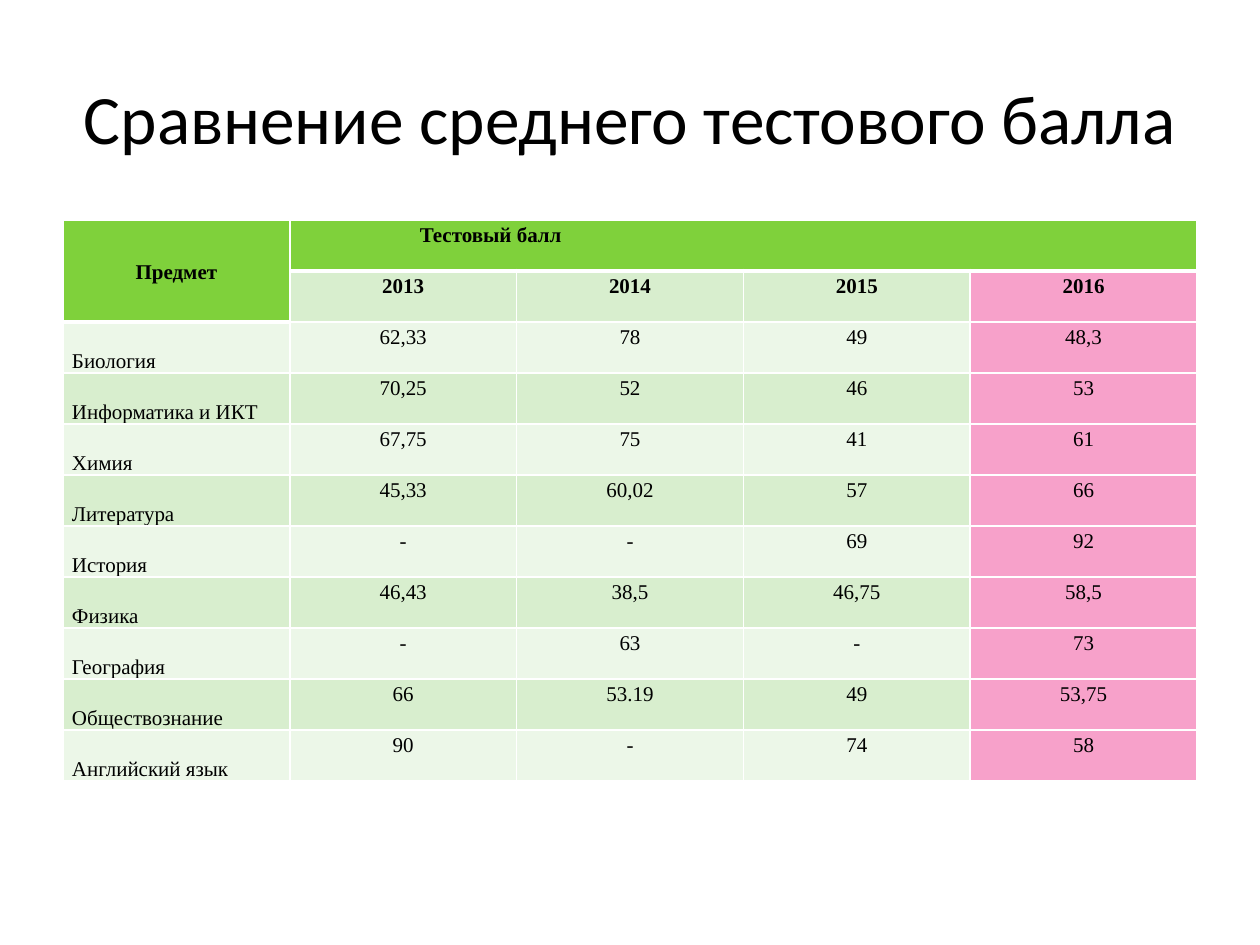
from dataclasses import dataclass

from lxml.etree import SubElement
from pptx import Presentation
from pptx.dml.color import RGBColor
from pptx.enum.text import MSO_ANCHOR, PP_ALIGN
from pptx.oxml import parse_xml
from pptx.oxml.ns import nsdecls, qn
from pptx.util import Inches, Pt

PX_PER_INCH = 126


@dataclass(frozen=True)
class Theme:
    text: str = "000000"
    header: str = "7FD13B"
    band_dark: str = "D8EECE"
    band_light: str = "ECF7E8"
    latest: str = "F7A1CA"
    border: str = "FFFFFF"
    title_font: str = "Calibri"
    table_font: str = "Times New Roman"
    title_size: float = 39.6
    table_size: float = 12
    thin: int = 1
    thick: int = 3


THEME = Theme()

YEARS = ["2013", "2014", "2015", "2016"]
SCORES = [
    ["Биология", "62,33", "78", "49", "48,3"],
    ["Информатика и ИКТ", "70,25", "52", "46", "53"],
    ["Химия", "67,75", "75", "41", "61"],
    ["Литература", "45,33", "60,02", "57", "66"],
    ["История", "-", "-", "69", "92"],
    ["Физика", "46,43", "38,5", "46,75", "58,5"],
    ["География", "-", "63", "-", "73"],
    ["Обществознание", "66", "53.19", "49", "53,75"],
    ["Английский язык", "90", "-", "74", "58"],
]


def px(n):
    return Inches(n / PX_PER_INCH)


def format_text(p, font, size, align, bold=False):
    p.alignment = align
    for r in p.runs:
        r.font.name = font
        r.font.size = Pt(size)
        r.font.bold = bold
        r.font.color.rgb = RGBColor.from_string(THEME.text)


def add_title(s, text, x, y, w, h):
    tf = s.shapes.add_textbox(px(x), px(y), px(w), px(h)).text_frame
    tf.word_wrap = True
    tf.vertical_anchor = MSO_ANCHOR.MIDDLE
    tf.text = text
    format_text(tf.paragraphs[0], THEME.title_font, THEME.title_size, PP_ALIGN.CENTER)


def set_borders(cell, top, bottom):
    """Draw all four edges; top and bottom are widths in points."""
    tcPr = cell._tc.get_or_add_tcPr()
    edges = {"lnL": THEME.thin, "lnR": THEME.thin, "lnT": top, "lnB": bottom}
    for i, (tag, width) in enumerate(edges.items()):
        ln = parse_xml(f'<a:{tag} {nsdecls("a")} w="{Pt(width)}"/>')
        fill = SubElement(ln, qn("a:solidFill"))
        SubElement(fill, qn("a:srgbClr"), val=THEME.border)
        tcPr.insert(i, ln)


def cell_fill(row, col, last_col):
    if row == 0 or (row == 1 and col == 0):
        return THEME.header
    if col == last_col:
        return THEME.latest
    return THEME.band_dark if row % 2 else THEME.band_light


def format_cell(cell, row, col, last_col):
    header_rows = 2 if col == 0 else 1
    is_subject = col == 0 and row >= header_rows
    cell.margin_left = cell.margin_right = px(9)
    cell.margin_top = cell.margin_bottom = 0
    if col == 0:
        cell.vertical_anchor = MSO_ANCHOR.BOTTOM if is_subject else MSO_ANCHOR.MIDDLE
    cell.fill.solid()
    cell.fill.fore_color.rgb = RGBColor.from_string(cell_fill(row, col, last_col))
    set_borders(cell,
                THEME.thick if row == header_rows else THEME.thin,
                THEME.thick if row == header_rows - 1 else THEME.thin)
    p = cell.text_frame.paragraphs[0]
    p.line_spacing = 1.15
    left = is_subject or (row == 0 and col > 0)
    format_text(p, THEME.table_font, THEME.table_size,
                PP_ALIGN.LEFT if left else PP_ALIGN.CENTER, bold=row < 2)


def add_score_table(s, x, y, w, row_h):
    rows = [["Предмет", "Тестовый балл", "", "", ""], ["", *YEARS], *SCORES]
    last_col = len(YEARS)
    table = s.shapes.add_table(len(rows), last_col + 1, px(x), px(y),
                               px(w), px(row_h * len(rows))).table
    table.first_row = table.horz_banding = False
    for row in table.rows:
        row.height = px(row_h)
    for i, values in enumerate(rows):
        for j, value in enumerate(values):
            cell = table.cell(i, j)
            cell.text = value
            format_cell(cell, i, j, last_col)
    table.cell(0, 0).merge(table.cell(1, 0))
    table.cell(0, 1).merge(table.cell(0, last_col))
    pPr = table.cell(0, 1).text_frame.paragraphs[0]._p.get_or_add_pPr()
    pPr.set("marL", str(px(121)))


def main():
    prs = Presentation()
    prs.slide_width, prs.slide_height = px(1260), px(945)
    s = prs.slides.add_slide(prs.slide_layouts[6])
    add_title(s, "Сравнение среднего тестового балла", 63, 38, 1134, 157)
    add_score_table(s, 63, 220, 1134, 51)
    prs.save("out.pptx")


if __name__ == "__main__":
    main()
